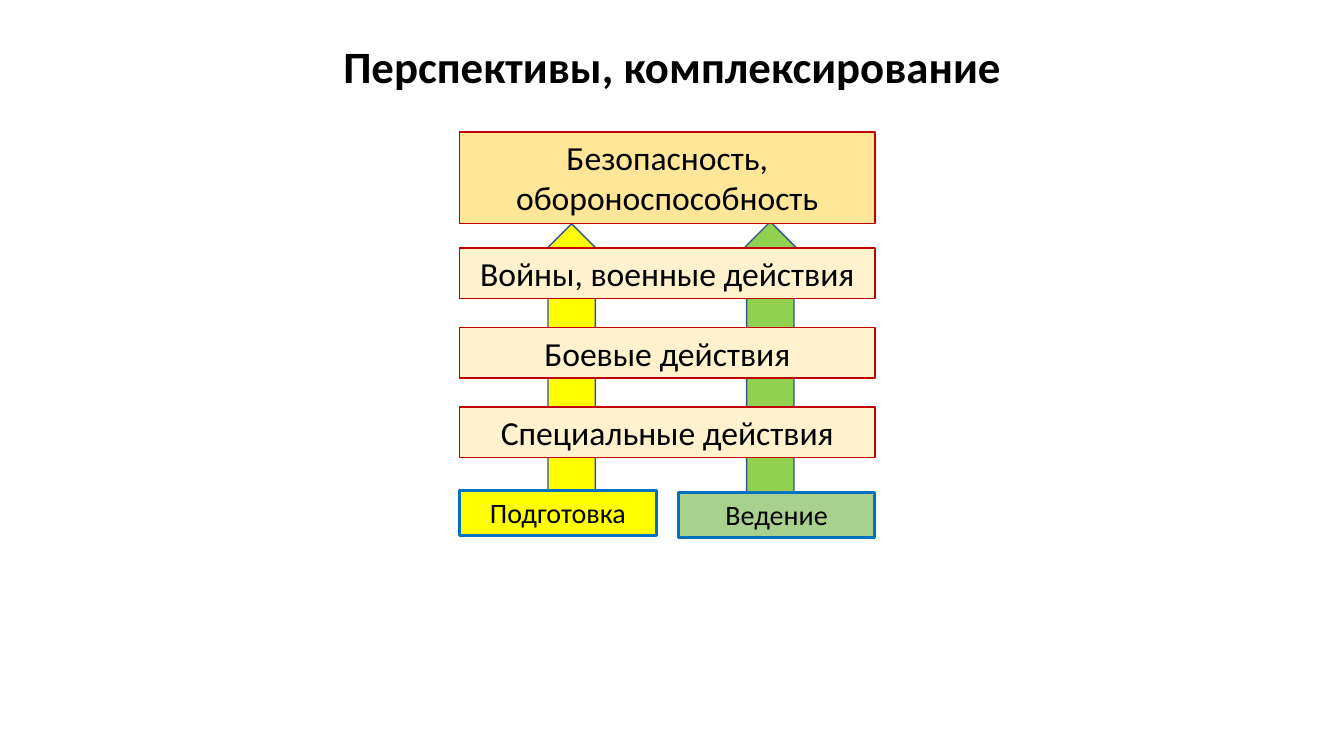
from pptx import Presentation
from pptx.dml.color import RGBColor
from pptx.enum.shapes import MSO_SHAPE
from pptx.enum.text import MSO_ANCHOR, MSO_AUTO_SIZE, PP_ALIGN
from pptx.util import Inches, Pt

RECT, UP_ARROW = MSO_SHAPE.RECTANGLE, MSO_SHAPE.UP_ARROW
CENTER = PP_ALIGN.CENTER
TOP, MIDDLE = MSO_ANCHOR.TOP, MSO_ANCHOR.MIDDLE
GROW, FIXED = MSO_AUTO_SIZE.SHAPE_TO_FIT_TEXT, MSO_AUTO_SIZE.NONE

BLACK = RGBColor(0x00, 0x00, 0x00)
YELLOW = RGBColor(0xFF, 0xFF, 0x00)
GREEN = RGBColor(0x92, 0xD0, 0x50)
SAGE = RGBColor(0xA9, 0xD1, 0x8E)
GOLD = RGBColor(0xFF, 0xE6, 0x99)
CREAM = RGBColor(0xFF, 0xF2, 0xCC)
RED = RGBColor(0xC0, 0x00, 0x00)
BLUE = RGBColor(0x00, 0x70, 0xC0)
NAVY = RGBColor(0x32, 0x54, 0x91)

# Percent of the slide's width (x, w) and height (y, h)
LEFT, WIDTH = 34.2, 30.9
LEVEL_TOP, LEVEL_STEP, LEVEL_H = 32.8, 10.53, 6.67
BASE_W, BASE_H = 14.63, 5.87
ARROW_W, ARROW_H = 7.05, 35.87


def write(tf, text, size=24, bold=False, color=BLACK, font="Calibri",
          anchor=TOP, fit=GROW, spacing=1.0):
    """Put one centred paragraph into a text frame."""
    tf.word_wrap = True
    tf.auto_size = fit
    tf.vertical_anchor = anchor
    p = tf.paragraphs[0]
    p.alignment = CENTER
    p.line_spacing = spacing
    r = p.add_run()
    r.text = text
    r.font.name, r.font.size, r.font.bold = font, Pt(size), bold
    r.font.color.rgb = color


class Deck:
    """Slide under construction, measured in percent of its size."""

    def __init__(self):
        self.prs = Presentation()
        self.prs.slide_width = Inches(13.33)
        self.prs.slide_height = Inches(7.5)
        self.slide = self.prs.slides.add_slide(self.prs.slide_layouts[5])

    def place(self, x, y, w, h):
        col, row = self.prs.slide_width / 100, self.prs.slide_height / 100
        return int(x * col), int(y * row), int(w * col), int(h * row)

    def title(self, text, *box):
        s = self.slide.shapes.title
        s.left, s.top, s.width, s.height = self.place(*box)
        write(s.text_frame, text, size=32, bold=True, anchor=MIDDLE,
              fit=FIXED, spacing=0.9)

    def shape(self, kind, box, fill, line, weight=1):
        s = self.slide.shapes.add_shape(kind, *self.place(*box))
        s.shadow.inherit = False
        s.fill.solid()
        s.fill.fore_color.rgb = fill
        s.line.color.rgb = line
        s.line.width = Pt(weight)
        return s

    def arrow(self, x, y, fill):
        self.shape(UP_ARROW, (x, y, ARROW_W, ARROW_H), fill, NAVY)

    def box(self, text, *box, fill, line=RED, weight=1, size=24):
        s = self.shape(RECT, box, fill, line, weight)
        write(s.text_frame, text, size=size)


def main():
    deck = Deck()

    # Arrows running up behind the levels
    deck.arrow(53.79, 29.33, GREEN)
    deck.arrow(39.01, 29.6, YELLOW)

    deck.title("Перспективы, комплексирование", 6.9, 3.73, 86.27, 10.67)

    # Levels of action
    levels = ("Войны, военные действия", "Боевые действия",
              "Специальные действия")
    for i, text in enumerate(levels):
        deck.box(text, LEFT, LEVEL_TOP + i * LEVEL_STEP, WIDTH, LEVEL_H,
                 fill=CREAM)

    # Bases of the two arrows, at the edges of the column
    bases = (("Подготовка", LEFT, 64.93, YELLOW),
             ("Ведение", LEFT + WIDTH - BASE_W, 65.2, SAGE))
    for text, x, y, fill in bases:
        deck.box(text, x, y, BASE_W, BASE_H, fill=fill, line=BLUE,
                 weight=2, size=20)

    # Goal on top
    deck.box("Безопасность, обороноспособность", LEFT, 17.47, WIDTH, 12.13,
             fill=GOLD)

    deck.prs.save("out.pptx")


if __name__ == "__main__":
    main()
